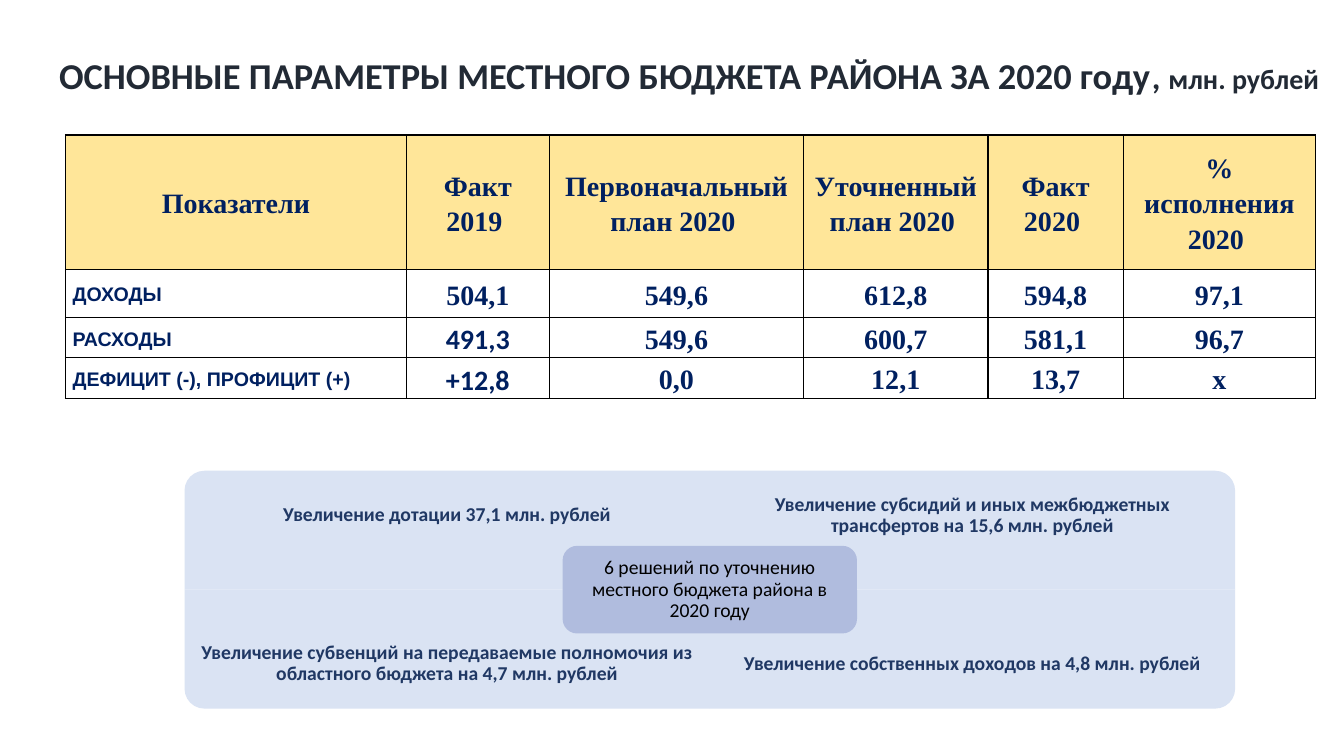
import pptx
import pptx.dml.color
import pptx.enum.shapes
import pptx.enum.text
import pptx.oxml
import pptx.oxml.ns
import pptx.util

Inches = pptx.util.Inches
RGBColor = pptx.dml.color.RGBColor
Align = pptx.enum.text.PP_ALIGN
Anchor = pptx.enum.text.MSO_ANCHOR
Shapes = pptx.enum.shapes.MSO_SHAPE

BLACK = RGBColor(0x00, 0x00, 0x00)
TITLE_COLOR = RGBColor(0x22, 0x2A, 0x35)
TABLE_TEXT = RGBColor(0x00, 0x20, 0x60)
HEADER_FILL = RGBColor(0xFF, 0xE6, 0x99)
QUADRANT_FILL = RGBColor(0xDA, 0xE3, 0xF3)
QUADRANT_TEXT = RGBColor(0x20, 0x38, 0x64)
CENTER_FILL = RGBColor(0xB0, 0xBC, 0xDE)

COLUMN_WIDTHS = [3.38, 1.42, 2.52, 1.83, 1.34, 1.91]
ROW_HEIGHTS = [1.33, 0.48, 0.4, 0.4]
BUDGET = [
    ["Показатели", "Факт 2019 ", "Первоначальный план 2020 ",
     "Уточненный план 2020 ", "Факт 2020 ", "% исполнения 2020 "],
    ["ДОХОДЫ", "504,1", "549,6", "612,8", "594,8", "97,1"],
    ["РАСХОДЫ", "491,3", "549,6", "600,7", "581,1", "96,7"],
    ["ДЕФИЦИТ (-), ПРОФИЦИТ (+)", "+12,8", "0,0", "12,1", "13,7", "х"],
]
# Column, row, rotation that turns the rounded corner outwards, text
QUADRANTS = [
    (0, 0, 270, "Увеличение дотации 37,1 млн. рублей"),
    (1, 0, 0, "Увеличение субсидий и иных межбюджетных трансфертов на 15,6 млн. рублей"),
    (0, 1, 180, "Увеличение субвенций на передаваемые полномочия из областного бюджета "
                "на 4,7 млн. рублей"),
    (1, 1, 90, "Увеличение собственных доходов на 4,8 млн. рублей"),
]


def add_text(paragraph, text, *, size, color, font="Calibri", bold=True,
             align=Align.CENTER, line_spacing=None):
    """Append a formatted run to the paragraph."""
    paragraph.alignment = align
    if line_spacing:
        paragraph.line_spacing = line_spacing
    run = paragraph.add_run()
    run.text = text
    run.font.size = pptx.util.Pt(size)
    run.font.name = font
    run.font.bold = bold
    run.font.color.rgb = color


def set_margins(target, horizontal, vertical):
    target.margin_left = target.margin_right = Inches(horizontal)
    target.margin_top = target.margin_bottom = Inches(vertical)


def set_borders(cell):
    properties = cell._tc.get_or_add_tcPr()
    for index, side in enumerate(("lnL", "lnR", "lnT", "lnB")):
        border = pptx.oxml.parse_xml(
            f'<a:{side} {pptx.oxml.ns.nsdecls("a")} w="12700"><a:solidFill>'
            f'<a:srgbClr val="{BLACK}"/></a:solidFill></a:{side}>')
        properties.insert(index, border)


def add_block(slide, kind, left, top, width, height, fill):
    shape = slide.shapes.add_shape(
        kind, Inches(left), Inches(top), Inches(width), Inches(height))
    shape.shadow.inherit = False
    shape.fill.solid()
    shape.fill.fore_color.rgb = fill
    shape.line.fill.background()
    return shape


def add_label(slide, text, left, top, width, height, *, margin, **text_format):
    box = slide.shapes.add_textbox(
        Inches(left), Inches(top), Inches(width), Inches(height))
    frame = box.text_frame
    frame.word_wrap = True
    frame.vertical_anchor = Anchor.MIDDLE
    set_margins(frame, margin, margin)
    add_text(frame.paragraphs[0], text, size=14, line_spacing=0.9, **text_format)


def format_title(slide, left, top, width, height):
    title = slide.shapes.title
    title.left, title.top = Inches(left), Inches(top)
    title.width, title.height = Inches(width), Inches(height)
    frame = title.text_frame
    frame.word_wrap = False
    frame.auto_size = pptx.enum.text.MSO_AUTO_SIZE.SHAPE_TO_FIT_TEXT
    frame.vertical_anchor = Anchor.TOP
    for text, size in (("ОСНОВНЫЕ ПАРАМЕТРЫ МЕСТНОГО БЮДЖЕТА РАЙОНА ЗА 2020 году", 26),
                       (", ", 24), ("млн. рублей", 20)):
        add_text(frame.paragraphs[0], text, size=size, color=TITLE_COLOR)


def cell_format(row, column):
    """Return the text format for a place in the budget table."""
    if row > 0 and column == 0:
        return {"size": 14, "font": "Arial", "align": Align.LEFT}
    if row > 1 and column == 1:
        return {"size": 20, "font": "Calibri"}
    return {"size": 20, "font": "Times New Roman"}


def add_budget_table(slide, left, top):
    table = slide.shapes.add_table(
        len(ROW_HEIGHTS), len(COLUMN_WIDTHS), Inches(left), Inches(top),
        Inches(sum(COLUMN_WIDTHS)), Inches(sum(ROW_HEIGHTS))).table
    table.first_row = table.horz_banding = False
    for column, width in zip(table.columns, COLUMN_WIDTHS):
        column.width = Inches(width)
    for row, height in zip(table.rows, ROW_HEIGHTS):
        row.height = Inches(height)
    for row, texts in enumerate(BUDGET):
        for column, text in enumerate(texts):
            cell = table.cell(row, column)
            cell.vertical_anchor = Anchor.MIDDLE
            set_margins(cell, 0.07, 0)
            if row == 0:
                cell.fill.solid()
                cell.fill.fore_color.rgb = HEADER_FILL
            else:
                cell.fill.background()
            set_borders(cell)
            add_text(cell.text_frame.paragraphs[0], text, color=TABLE_TEXT,
                     line_spacing=1.15, **cell_format(row, column))


def add_matrix(slide, left, top, width, height):
    """Draw four quadrants around a central block."""
    part_width, part_height = width / 2, height / 2
    label_height = part_height * 0.75
    for column, row, rotation, text in QUADRANTS:
        part_left = left + column * part_width
        part_top = top + row * part_height
        sideways = rotation in (90, 270)
        shape_width, shape_height = (
            (part_height, part_width) if sideways else (part_width, part_height))
        quadrant = add_block(
            slide, Shapes.ROUND_1_RECTANGLE,
            part_left + (part_width - shape_width) / 2,
            part_top + (part_height - shape_height) / 2,
            shape_width, shape_height, QUADRANT_FILL)
        quadrant.rotation = rotation
        label_top = part_top + row * (part_height - label_height)
        add_label(slide, text, part_left, label_top, part_width, label_height,
                  margin=0.11, color=QUADRANT_TEXT)

    center_width, center_height, inset = 2.92, 0.87, 0.04
    center_left = left + (width - center_width) / 2
    center_top = top + (height - center_height) / 2
    add_block(slide, Shapes.ROUNDED_RECTANGLE, center_left, center_top,
              center_width, center_height, CENTER_FILL)
    add_label(slide, "6 решений по уточнению местного бюджета района в 2020 году",
              center_left + inset, center_top + inset,
              center_width - 2 * inset, center_height - 2 * inset,
              margin=0.06, color=BLACK, bold=False)


def main():
    presentation = pptx.Presentation()
    presentation.slide_width = Inches(13.33)
    presentation.slide_height = Inches(7.5)
    slide = presentation.slides.add_slide(presentation.slide_layouts[5])
    format_title(slide, 0.44, 0.48, 12.79, 0.54)
    add_budget_table(slide, 0.65, 1.34)
    add_matrix(slide, 1.83, 4.67, 10.42, 2.36)
    presentation.save("out.pptx")


if __name__ == "__main__":
    main()
